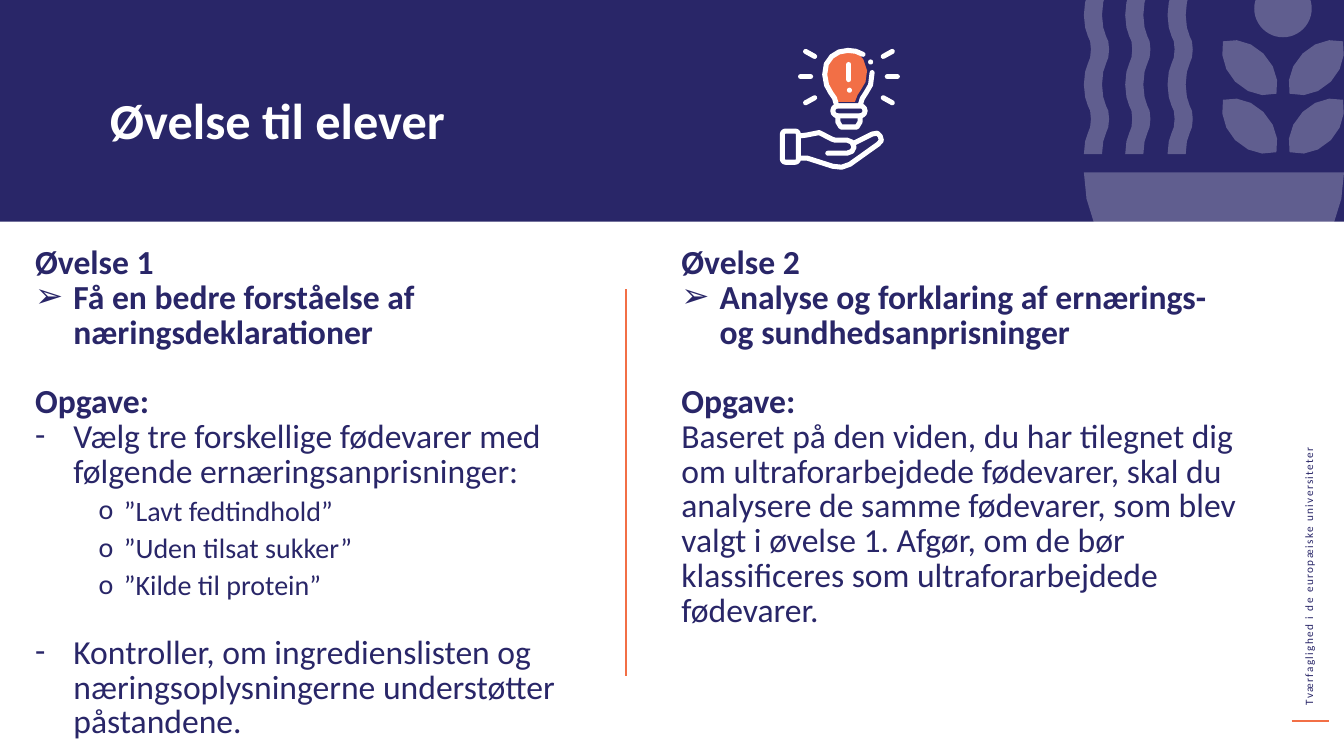
from lxml.etree import SubElement
from pptx import Presentation
from pptx.dml.color import RGBColor
from pptx.enum.shapes import MSO_CONNECTOR as CONNECTOR, MSO_SHAPE as SHAPE
from pptx.enum.text import MSO_ANCHOR as ANCHOR, PP_ALIGN as ALIGN
from pptx.oxml.ns import qn
from pptx.util import Inches, Pt

NAVY, ORANGE, WHITE, FONT = "292668", "F26F46", "FFFFFF", "Calibri"
TITLE = "Øvelse til elever"
SIDE_NOTE = "Tværfaglighed i de europæiske universiteter"
LINE_PITCH = Pt(24.8)

# kind: (bullet, text indent, size, bold, line spacing, space before)
STYLES = {
    "head": (None, 0, 24, True, LINE_PITCH, 0),
    "goal": ("➢", 0.38, 24, True, LINE_PITCH, 0),
    "task": (None, 0, 24, True, LINE_PITCH, 24.8),
    "body": (None, 0, 24, False, LINE_PITCH, 0),
    "step": ("-", 0.38, 24, False, LINE_PITCH, 0),
    "claim": ("o", 0.88, 20, False, 0.9, 5),
    "last step": ("-", 0.38, 24, False, LINE_PITCH, 24.8),
}
EXERCISES = [
    (0.25, [
        ("head", "Øvelse 1"),
        ("goal", "Få en bedre forståelse af næringsdeklarationer"),
        ("task", "Opgave:"),
        ("step", "Vælg tre forskellige fødevarer med følgende ernæringsanprisninger:"),
        ("claim", "”Lavt fedtindhold”"),
        ("claim", "”Uden tilsat sukker”"),
        ("claim", "”Kilde til protein”"),
        ("last step", "Kontroller, om ingredienslisten og næringsoplysningerne "
                      "understøtter påstandene."),
    ]),
    (6.66, [
        ("head", "Øvelse 2"),
        ("goal", "Analyse og forklaring af ernærings- og sundhedsanprisninger"),
        ("task", "Opgave:"),
        ("body", "Baseret på den viden, du har tilegnet dig om ultraforarbejdede "
                 "fødevarer, skal du analysere de samme fødevarer, som blev valgt i "
                 "øvelse 1. Afgør, om de bør klassificeres som ultraforarbejdede fødevarer."),
    ]),
]

# Outlines: a start point, then points (straight) or six numbers (Bézier curve)
BOWL = [(13.33, 1.71), (13.33, 2.43, 12.75, 3.01, 12.04, 3.01),
        (11.33, 3.01, 10.75, 2.43, 10.75, 1.71)]
LEAF = [(12.25, 1.39), (12.14, 1.28, 12.1, 1.12, 12.13, 0.99),
        (12.26, 0.95, 12.42, 1, 12.53, 1.11), (12.65, 1.23, 12.69, 1.38, 12.66, 1.51),
        (12.52, 1.55, 12.37, 1.51, 12.25, 1.39)]
WAVE_PERIOD = [(0, 1.42, 0.02, 1.37, 0.04, 1.32), (0.06, 1.28, 0.07, 1.25, 0.07, 1.18),
               (0.07, 1.11, 0.06, 1.08, 0.04, 1.05), (0.02, 1, 0, 0.94, 0, 0.84)]
WAVE_LENGTH, WAVE_WIDTH = 0.69, 0.18
BULB_GLOW = [(8.6, 0.7), (8.61, 0.8, 8.57, 0.84, 8.54, 0.89), (8.52, 0.92, 8.49, 0.96, 8.48, 1.01),
             (8.29, 1.01), (8.28, 0.96, 8.25, 0.92, 8.23, 0.89),
             (8.2, 0.84, 8.17, 0.8, 8.17, 0.72), (8.17, 0.64, 8.2, 0.59, 8.23, 0.56),
             (8.27, 0.52, 8.33, 0.5, 8.38, 0.5), (8.43, 0.5, 8.48, 0.51, 8.52, 0.54),
             (8.52, 0.54, 8.61, 0.62, 8.6, 0.7)]
ICON_STROKES = [
    # glass
    [(8.56, 0.54), (8.52, 0.51, 8.46, 0.5, 8.41, 0.5), (8.35, 0.5, 8.29, 0.52, 8.25, 0.56),
     (8.2, 0.6, 8.18, 0.66, 8.18, 0.74), (8.18, 0.83, 8.21, 0.87, 8.24, 0.92),
     (8.27, 0.95, 8.29, 0.99, 8.3, 1.05), (8.53, 1.05), (8.54, 0.99, 8.56, 0.96, 8.59, 0.92),
     (8.62, 0.87, 8.66, 0.83, 8.65, 0.72)],
    # socket
    [(8.31, 1.15), (8.31, 1.21), (8.34, 1.26), (8.5, 1.26), (8.53, 1.21), (8.53, 1.15)],
    # thumb
    [(7.92, 1.35), (8, 1.34), (8.09, 1.3, 8.16, 1.3, 8.25, 1.38), (8.28, 1.39), (8.4, 1.39),
     (8.44, 1.39, 8.47, 1.42, 8.47, 1.46), (8.47, 1.49, 8.44, 1.52, 8.4, 1.52), (8.21, 1.52)],
    # palm
    [(8.47, 1.42), (8.65, 1.33), (8.69, 1.31, 8.72, 1.32, 8.73, 1.35),
     (8.75, 1.38, 8.75, 1.41, 8.71, 1.43), (8.43, 1.63), (8.37, 1.67, 8.33, 1.66, 8.26, 1.65),
     (8.01, 1.57), (7.93, 1.57)],
]
ICON_FRAMES = [(8.26, 1.05, 0.32, 0.1, 0.5), (7.76, 1.3, 0.16, 0.31, 0.2)]
ICON_DOTS = [(8.4, 0.87), (8.61, 0.59)]
RAYS = [((8.8, 0.76), (8.9, 0.76)), ((8.76, 0.56), (8.85, 0.51)), ((8.76, 0.97), (8.85, 1.02))]
RAY_AXIS, LEAF_AXIS = 8.42, 12.725
ICON_LINE = 3.6


def rgb(hex_color):
    return RGBColor.from_string(hex_color)


def paint(shape, fill=None, alpha=None, stroke=None):
    shape.shadow.inherit = False
    if fill:
        shape.fill.solid()
        shape.fill.fore_color.rgb = rgb(fill)
    else:
        shape.fill.background()
    if alpha:
        color = shape.element.spPr.find(qn("a:solidFill"))[0]
        SubElement(color, qn("a:alpha")).set("val", str(alpha * 1000))
    if stroke:
        shape.line.color.rgb, shape.line.width = rgb(WHITE), Pt(stroke)
        shape.element.spPr.find(qn("a:ln")).set("cap", "rnd")
    else:
        shape.line.fill.background()
    return shape


def flatten(outline, steps=2):
    """Turn the curves of an outline into short straight steps."""
    points = [outline[0]]
    for part in outline[1:]:
        if len(part) == 2:
            points.append(part)
            continue
        controls = [points[-1], part[:2], part[2:4], part[4:]]
        for t in (i / steps for i in range(1, steps + 1)):
            weights = ((1 - t) ** 3, 3 * t * (1 - t) ** 2, 3 * t * t * (1 - t), t ** 3)
            points.append(tuple(sum(w * c[axis] for w, c in zip(weights, controls))
                                for axis in (0, 1)))
    return points


def draw(parent, points, close=True):
    points = [(Inches(x), Inches(y)) for x, y in points]
    builder = parent.build_freeform(*points[0], scale=1.0)
    builder.add_line_segments(points[1:], close=close)
    return builder.convert_to_shape()


def add_preset(parent, kind, *box):
    return parent.add_shape(kind, *map(Inches, box))


def add_line(parent, start, end, color=ORANGE, width=1.5):
    line = parent.add_connector(CONNECTOR.STRAIGHT, *map(Inches, start + end))
    line.line.color.rgb, line.line.width = rgb(color), Pt(width)
    spPr = line.element.spPr
    spPr.find(qn("a:ln")).set("cap", "rnd" if color == WHITE else "flat")
    SubElement(spPr, qn("a:effectLst"))


def set_font(paragraph, size, color, bold=False):
    for run in paragraph.runs:
        font = run.font
        font.name, font.size, font.bold = FONT, Pt(size), bold
        font.color.rgb = rgb(color)


def write_exercise(frame, lines):
    frame.word_wrap = True
    for i, (kind, text) in enumerate(lines):
        bullet, indent, size, bold, spacing, before = STYLES[kind]
        paragraph = frame.add_paragraph() if i else frame.paragraphs[0]
        paragraph.text = text
        if bullet:
            pPr = paragraph._p.get_or_add_pPr()
            pPr.set("marL", str(Inches(indent)))
            pPr.set("indent", str(-Inches(0.25 if kind == "claim" else indent)))
            SubElement(pPr, qn("a:buFont")).set("typeface", FONT)
            SubElement(pPr, qn("a:buChar")).set("char", bullet)
        paragraph.line_spacing = spacing
        if i:
            paragraph.space_before = Pt(before)
        set_font(paragraph, size, NAVY, bold)


def draw_bowl(parent):
    leaf = flatten(LEAF, 3)
    mirrored = [(2 * LEAF_AXIS - x, y) for x, y in leaf]
    pieces = [flatten(BOWL, 8)]
    pieces += [[(x, y - rise) for x, y in side] for rise in (0, 0.58) for side in (leaf, mirrored)]
    curves = [tuple(v - WAVE_LENGTH * k * (n % 2) for n, v in enumerate(curve))
              for k in range(3) for curve in WAVE_PERIOD][:10]
    edge = flatten([(0, 1.53)] + curves)
    band = edge + [(x + WAVE_WIDTH, y) for x, y in reversed(edge)]
    pieces += [[(x + left, y) for x, y in band] for left in (10.75, 11.16, 11.58)]
    for piece in pieces:
        paint(draw(parent, piece), WHITE, 26)
    paint(add_preset(parent, SHAPE.OVAL, 12.44, -0.2, 0.57, 0.57), WHITE, 26)


def draw_idea_icon(parent):
    paint(draw(parent, flatten(BULB_GLOW)), ORANGE)
    for stroke in ICON_STROKES:
        paint(draw(parent, flatten(stroke), close=False), stroke=ICON_LINE)
    for *box, rounding in ICON_FRAMES:
        frame = paint(add_preset(parent, SHAPE.ROUNDED_RECTANGLE, *box), stroke=ICON_LINE)
        frame.adjustments[0] = rounding
    for left, top in ICON_DOTS:
        paint(add_preset(parent, SHAPE.OVAL, left, top, 0.05, 0.05), WHITE)
    mirrored = [tuple((2 * RAY_AXIS - x, y) for x, y in ray) for ray in RAYS]
    for start, end in RAYS + mirrored + [((8.42, 0.64), (8.42, 0.79))]:
        add_line(parent, start, end, WHITE, ICON_LINE)


def main():
    deck = Presentation()
    deck.slide_width, deck.slide_height = Inches(13.33), Inches(7.5)
    slide = deck.slides.add_slide(deck.slide_layouts[5])
    shapes, title = slide.shapes, slide.shapes.title

    band = paint(add_preset(shapes, SHAPE.RECTANGLE, 0, 0, 13.33, 2.2), NAVY)
    title.element.addprevious(band.element)
    title.left, title.top, title.width, title.height = map(Inches, (0.99, 0.9, 11.46, 0.88))
    title.text_frame.text = TITLE
    title.text_frame.vertical_anchor = ANCHOR.TOP
    heading = title.text_frame.paragraphs[0]
    heading.alignment, heading.line_spacing = ALIGN.LEFT, 0.9
    set_font(heading, 36, WHITE, True)

    draw_bowl(shapes.add_group_shape().shapes)
    draw_idea_icon(shapes.add_group_shape().shapes)

    for left, lines in EXERCISES:
        column = shapes.add_textbox(*map(Inches, (left, 2.4, 5.8, 4.87)))
        write_exercise(column.text_frame, lines)
    add_line(shapes, (6.21, 2.87), (6.21, 6.71))

    side = shapes.add_textbox(*map(Inches, (10.6, 4.59, 4.77, 0.24)))
    side.rotation = 270
    side.text_frame.word_wrap = True
    side.text_frame.text = SIDE_NOTE
    note = side.text_frame.paragraphs[0]
    set_font(note, 8, NAVY)
    note.runs[0].font._element.set("spc", "100")
    add_line(shapes, (12.81, 7.15), (13.18, 7.15))
    deck.save("out.pptx")


if __name__ == "__main__":
    main()
